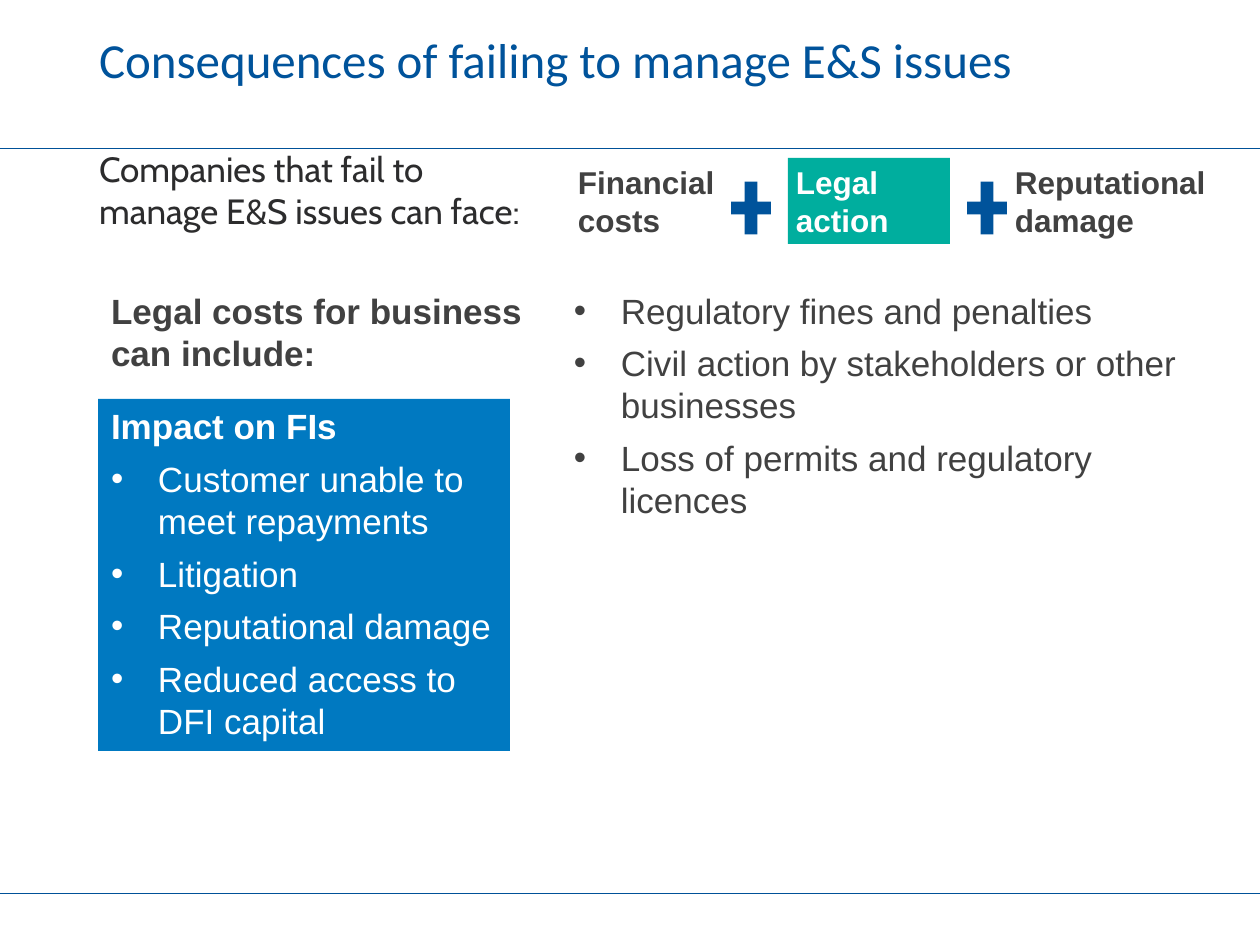
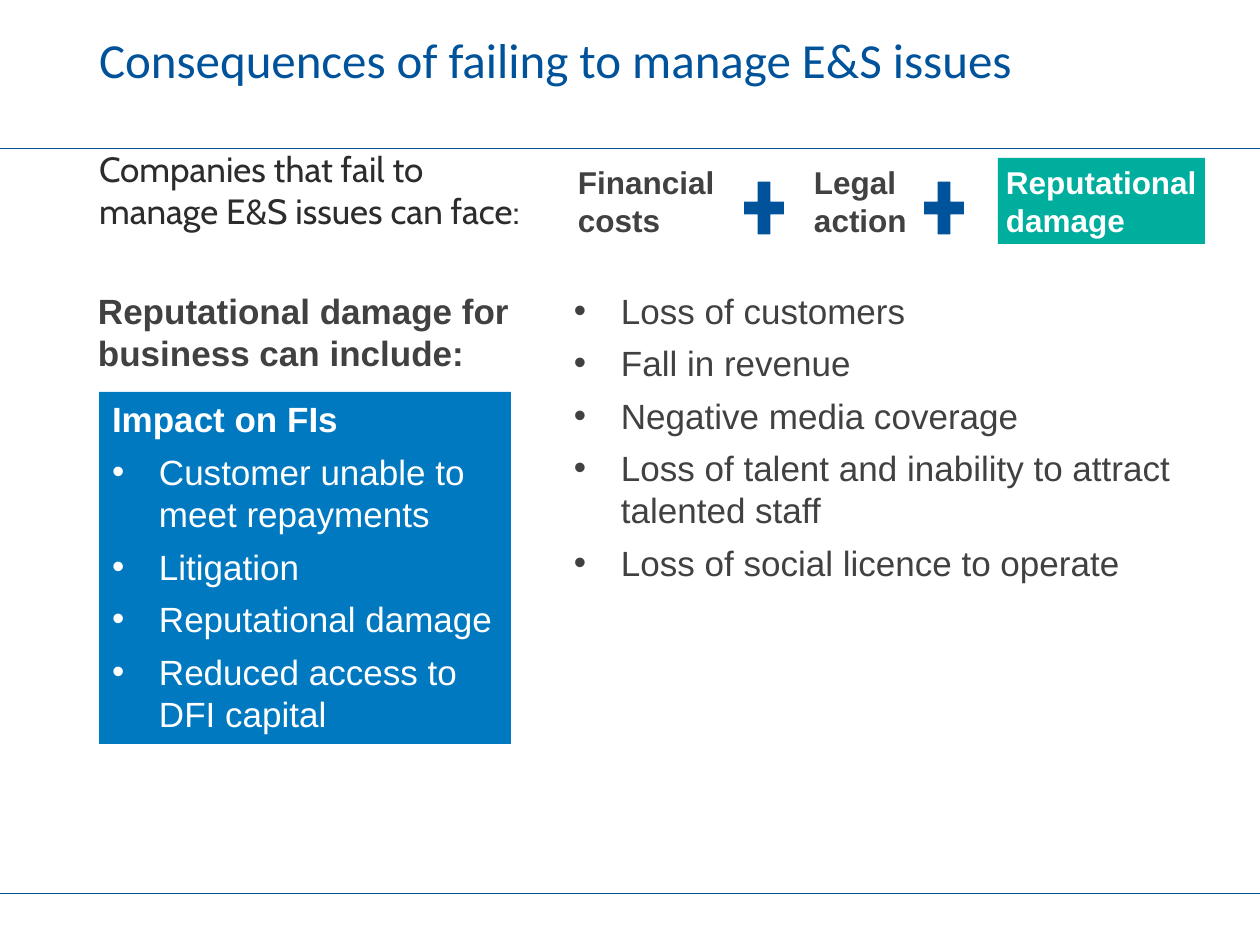
from dataclasses import dataclass

from lxml import etree
from pptx import Presentation, util as u
from pptx.dml.color import RGBColor
from pptx.enum import shapes, text
from pptx.oxml.ns import qn

SCALE = 914400 / 126


@dataclass(frozen=True)
class Theme:
    navy: str = "00539B"
    rule: str = "005198"
    blue: str = "0079C1"
    teal: str = "00AE9E"
    grey: str = "414141"
    ink: str = "2C2C2D"
    white: str = "FFFFFF"
    title: int = 28
    body: int = 20
    label: int = 18


theme = Theme()


def px(*nums):
    return [u.Emu(round(n * SCALE)) for n in nums]


def add_text(slide, at, lines, size, color, font="Arial", fill=None, bold=0,
             bullets=False, pad=(13, 6, 13, 6), mid=False):
    if fill:
        box = slide.shapes.add_shape(shapes.MSO_SHAPE.RECTANGLE, *px(*at))
        box.shadow.inherit = False
        box.fill.solid()
        box.fill.fore_color.rgb = RGBColor.from_string(fill)
        box.line.fill.background()
    else:
        box = slide.shapes.add_textbox(*px(*at))
    frame = box.text_frame
    frame.word_wrap = True
    frame.margin_left, frame.margin_top, frame.margin_right, frame.margin_bottom = px(*pad)
    frame.vertical_anchor = text.MSO_ANCHOR.MIDDLE if mid else text.MSO_ANCHOR.TOP
    for i, line in enumerate(lines):
        para = frame.paragraphs[0] if i == 0 else frame.add_paragraph()
        para.text = line
        para.alignment = text.PP_ALIGN.LEFT
        if bullets and i >= bold:
            props = para._p.get_or_add_pPr()
            indent = px(47)[0]
            props.set("marL", str(indent))
            props.set("indent", str(-indent))
            etree.SubElement(props, qn("a:buFont"), typeface="Arial")
            etree.SubElement(props, qn("a:buChar"), char="•")
        para.space_after = u.Pt(6 if len(lines) > 1 else 0)
        for run in para.runs:
            run.font.name = font
            run.font.size = u.Pt(size)
            run.font.bold = i < bold
            run.font.color.rgb = RGBColor.from_string(color)


topics = ["Financial\ncosts", "Legal\naction", "Reputational\ndamage"]
impact = [
    "Impact on FIs",
    "Customer unable to meet repayments",
    "Litigation",
    "Reputational damage",
    "Reduced access to DFI capital",
]
pages = [
    dict(
        active=1,
        tabs=[(570, 207), (788, 162), (1007, 207)],
        plus=[724, 960],
        lead="Legal costs for business can include:",
        span=462,
        inset=13,
        panel=(98, 399),
        points=[
            "Regulatory fines and penalties",
            "Civil action by stakeholders or other businesses",
            "Loss of permits and regulatory licences",
        ],
    ),
    dict(
        active=2,
        tabs=[(570, 207), (806, 207), (998, 207)],
        plus=[737, 917],
        lead="Reputational damage for business can include:",
        span=444,
        inset=0,
        panel=(99, 392),
        points=[
            "Loss of customers",
            "Fall in revenue",
            "Negative media coverage",
            "Loss of talent and inability to attract talented staff",
            "Loss of social licence to operate",
        ],
    ),
]

deck = Presentation()
deck.slide_width, deck.slide_height = px(1260, 945)

for page in pages:
    slide = deck.slides.add_slide(deck.slide_layouts[6])

    for y in (148, 893):
        rule = slide.shapes.add_connector(shapes.MSO_CONNECTOR.STRAIGHT, *px(0, y, 1260, y))
        rule.line.color.rgb = RGBColor.from_string(theme.rule)
        rule.line.width = u.Pt(0.25)
        etree.SubElement(rule._element.spPr, qn("a:effectLst"))

    add_text(slide, (99, 0, 949, 117), ["Consequences of failing to manage E&S issues"],
             theme.title, theme.navy, "Calibri", pad=(0, 0, 0, 0), mid=True)
    add_text(slide, (99, 148, 1115, 669), ["Companies that fail to\nmanage E&S issues can face:"],
             theme.body, theme.ink, "Cabin", pad=(0, 0, 0, 0))

    for i, (topic, (x, w)) in enumerate(zip(topics, page["tabs"])):
        live = i == page["active"]
        add_text(slide, (x, 158, w, 86), [topic], theme.label,
                 theme.white if live else theme.grey,
                 fill=theme.teal if live else None, bold=1, pad=(8, 5, 8, 5), mid=True)

    for x in page["plus"]:
        plus = slide.shapes.add_shape(shapes.MSO_SHAPE.MATH_PLUS, *px(x, 172, 54, 72))
        plus.shadow.inherit = False
        plus.fill.solid()
        plus.fill.fore_color.rgb = RGBColor.from_string(theme.navy)
        plus.line.fill.background()

    add_text(slide, (98, 283, page["span"], 97), [page["lead"]], theme.body, theme.grey,
             bold=1, pad=(page["inset"], 6, 13, 6))
    add_text(slide, (561, 283, 653, 246 if len(page["points"]) == 3 else 310),
             page["points"], theme.body, theme.grey, bullets=True)
    add_text(slide, (*page["panel"], 412, 352), impact, theme.body, theme.white,
             fill=theme.blue, bold=1, bullets=True)

deck.save("out.pptx")
